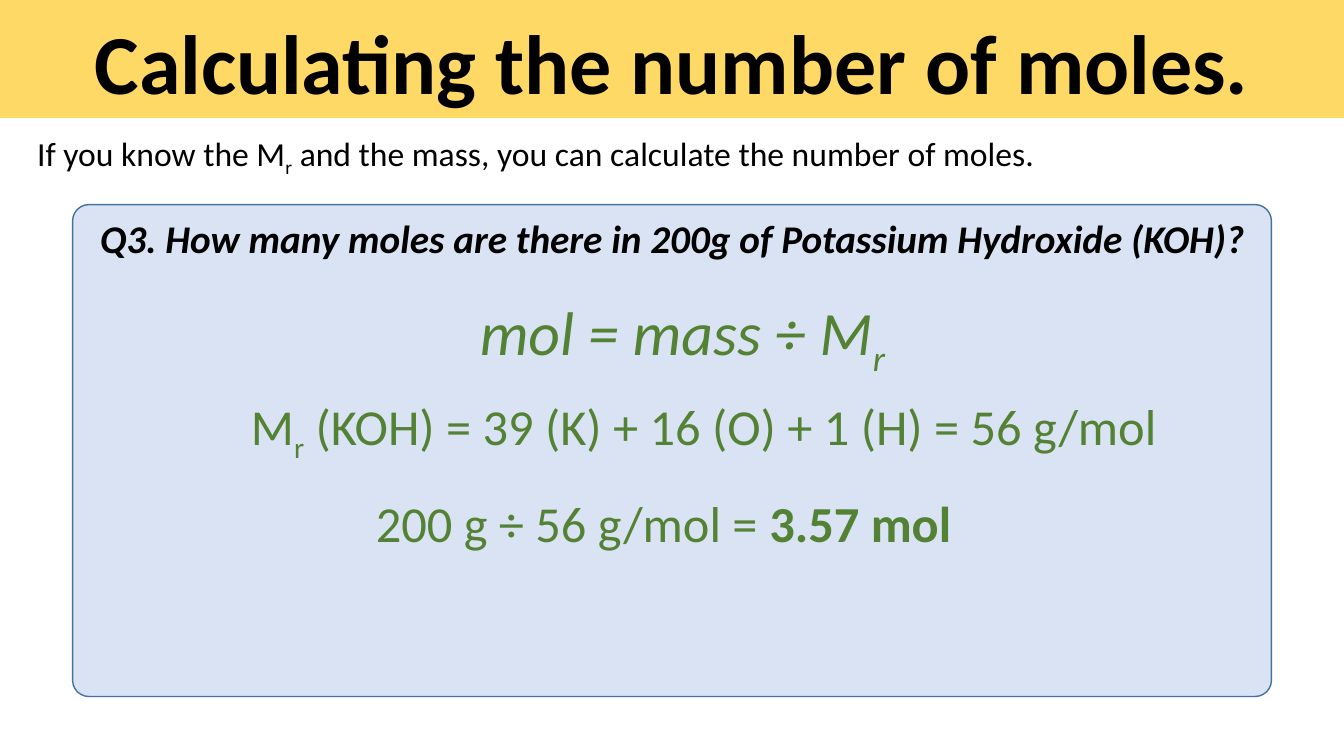
from pptx import Presentation
from pptx import util as u
from pptx.dml.color import RGBColor
from pptx.enum import shapes, text

EMU_PER_PX = 9144  # 100 px to the inch
WIDTH, HEIGHT = 1333, 750
COLOURS = {
    "ink": "000000",
    "banner": "FFD966",
    "panel": "DAE3F3",
    "panel_line": "43739E",
    "working": "548235",
}


def px(length):
    return u.Emu(length * EMU_PER_PX)


def colour(name):
    return RGBColor.from_string(COLOURS[name])


class SlideBuilder:
    font_name = "Calibri"

    def __init__(self, slide):
        self.slide = slide

    def add_runs(self, paragraph, runs, size, ink="ink", bold=False, italic=False):
        """Fill a paragraph from (words, style) pairs; style is "", "sub" or "bold"."""
        font = paragraph.font
        font.name, font.size = self.font_name, u.Pt(size)
        font.bold, font.italic = bold, italic
        font.color.rgb = colour(ink)
        for words, style in runs:
            run = paragraph.add_run()
            run.text = words
            if style == "sub":
                run._r.get_or_add_rPr().set("baseline", "-25000")
            elif style == "bold":
                run.font.bold = True

    def panel(self, kind, box, fill, words, size, anchor, line=None, italic=False):
        """Add a filled shape with one centred bold paragraph."""
        shape = self.slide.shapes.add_shape(kind, *map(px, box))
        shape.shadow.inherit = False
        shape.fill.solid()
        shape.fill.fore_color.rgb = colour(fill)
        if line:
            shape.line.color.rgb = colour(line)
            shape.line.width = u.Pt(1)
        else:
            shape.line.fill.background()
        frame = shape.text_frame
        frame.word_wrap = True
        frame.vertical_anchor = anchor
        paragraph = frame.paragraphs[0]
        paragraph.alignment = text.PP_ALIGN.CENTER
        self.add_runs(paragraph, [(words, "")], size, bold=True, italic=italic)
        return shape

    def text_line(self, box, runs, size, ink="working", italic=False):
        """Add a single unwrapped line of text."""
        frame = self.slide.shapes.add_textbox(*map(px, box)).text_frame
        frame.word_wrap = False
        frame.auto_size = text.MSO_AUTO_SIZE.SHAPE_TO_FIT_TEXT
        self.add_runs(frame.paragraphs[0], runs, size, ink, italic=italic)


def main():
    presentation = Presentation()
    presentation.slide_width, presentation.slide_height = px(WIDTH), px(HEIGHT)
    builder = SlideBuilder(presentation.slides.add_slide(presentation.slide_layouts[6]))

    banner = builder.panel(
        shapes.MSO_SHAPE.RECTANGLE, (0, 0, WIDTH, 117), "banner",
        "Calculating the number of moles.", 60, text.MSO_ANCHOR.BOTTOM)
    banner.text_frame.paragraphs[0].line_spacing = 0.9

    builder.text_line(
        (27, 127, 1010, 50),
        [("If you know the M", ""), ("r", "sub"),
         (" and the mass, you can calculate the number of moles.", "")],
        24, ink="ink")

    question = builder.panel(
        shapes.MSO_SHAPE.ROUNDED_RECTANGLE, (72, 203, 1189, 488), "panel",
        "Q3. How many moles are there in 200g of Potassium Hydroxide (KOH)?",
        28, text.MSO_ANCHOR.TOP, line="panel_line", italic=True)
    question.adjustments[0] = 0.033

    builder.text_line(
        (466, 287, 428, 84), [("mol = mass ÷ M", ""), ("r", "sub")], 44, italic=True)
    builder.text_line(
        (239, 387, 928, 71),
        [("M", ""), ("r", "sub"), (" (KOH) = 39 (K) + 16 (O) + 1 (H) = 56 g/mol", "")],
        36)
    builder.text_line(
        (363, 483, 596, 71), [("200 g ÷ 56 g/mol = ", ""), ("3.57 mol", "bold")], 36)

    presentation.save("out.pptx")


if __name__ == "__main__":
    main()
